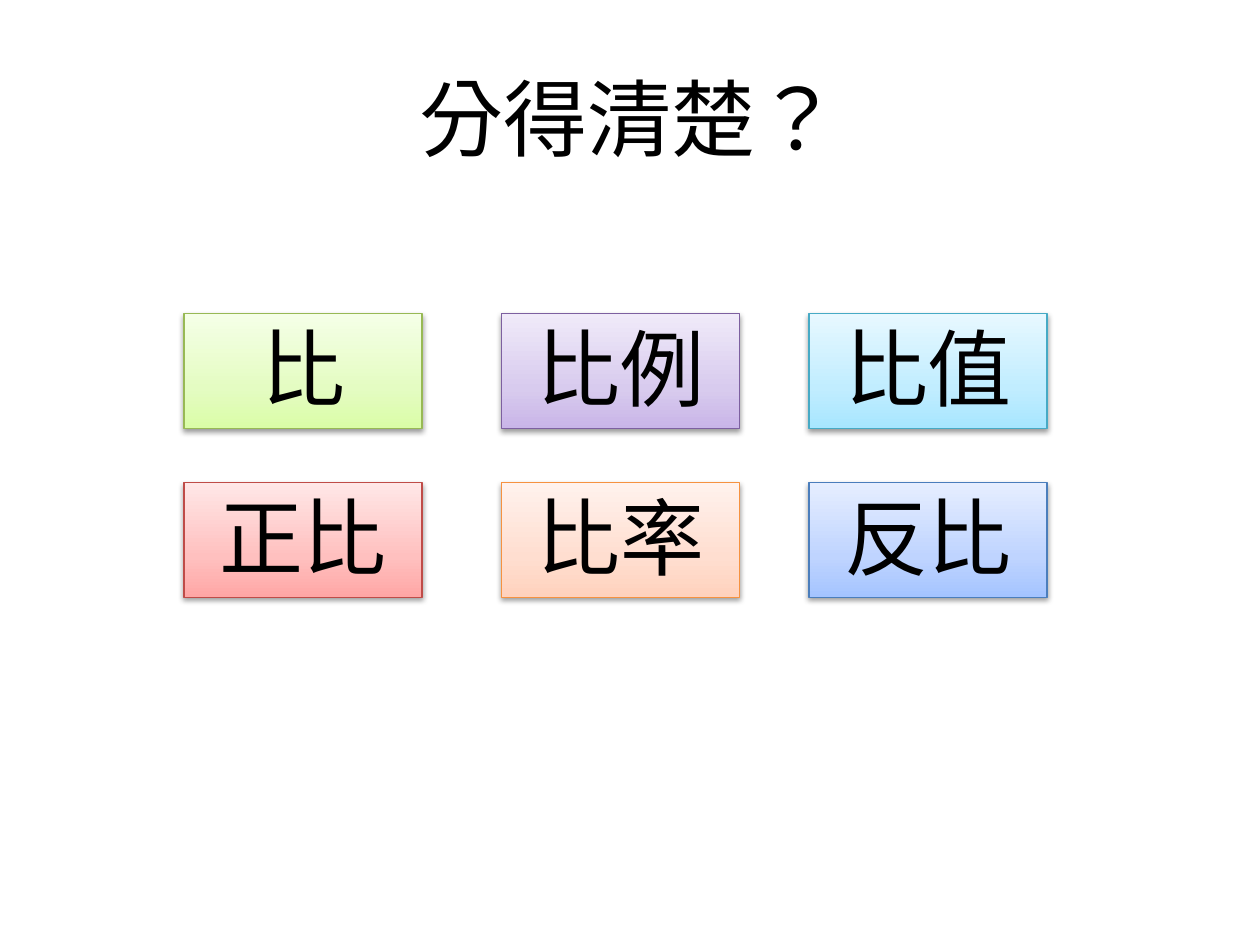
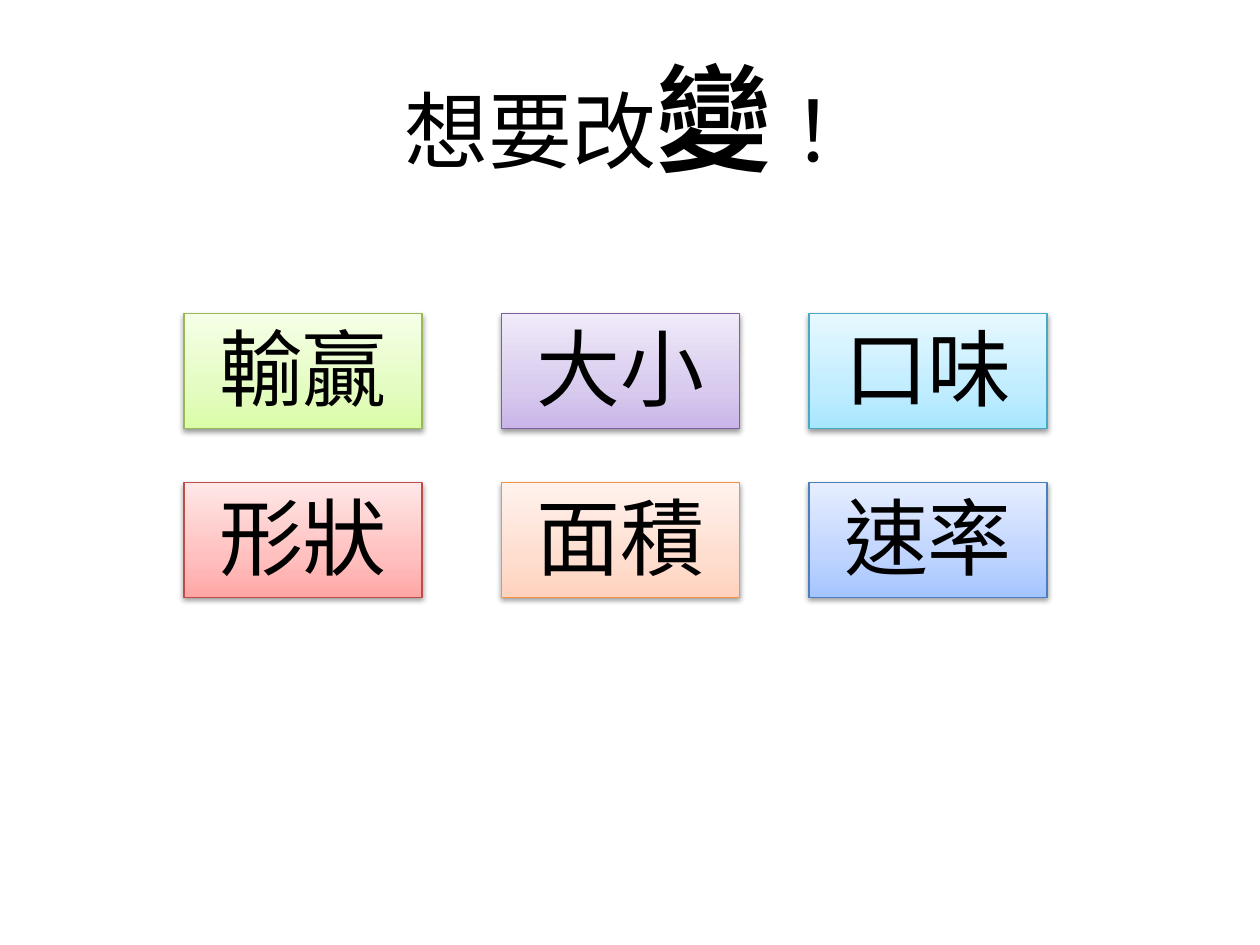
from dataclasses import dataclass

from lxml.etree import SubElement
from pptx import Presentation
from pptx.dml.color import RGBColor
from pptx.enum.shapes import MSO_SHAPE
from pptx.enum.text import MSO_ANCHOR, PP_ALIGN
from pptx.oxml import parse_xml
from pptx.oxml.ns import nsdecls, qn
from pptx.util import Inches, Pt


@dataclass(frozen=True)
class Theme:
    ink: str = "000000"
    title_font: str = "Times New Roman"
    tile_font: str = "Noto Sans CJK SC"
    language: str = "zh-TW"
    text_size: int = 48
    emphasis_size: int = 66
    line_width: float = 0.75
    # Each tile: bottom, middle and top of the gradient, then the border
    tiles: tuple = (
        ("DAFDA7", "E4FCC2", "F5FFE7", "98B955"),
        ("C9B5E8", "D8CBEE", "F0EAF9", "7D60A0"),
        ("A7E6FF", "C1EDFF", "E7F8FF", "46AAC5"),
        ("FFA6A5", "FFC0BF", "FFE7E7", "BF4C48"),
        ("FFD2BD", "FFDED0", "FFF2ED", "F69240"),
        ("A4C4FF", "BFD4FF", "E6EEFF", "4B7EBC"),
    )


THEME = Theme()

# Tile grid, in inches
COLUMNS = (1.46, 3.98, 6.42)
ROWS = (2.49, 3.83)
TILE_WIDTH, TILE_HEIGHT = 1.89, 0.91


def add_span(para, text, font=THEME.tile_font, size=THEME.text_size, bold=False):
    """Add one formatted run to a centred paragraph."""
    para.alignment = PP_ALIGN.CENTER
    span = para.add_run()
    span.text = text
    span.font.name = font
    span.font.size = Pt(size)
    span.font.bold = bold
    span.font.color.rgb = RGBColor.from_string(THEME.ink)
    properties = span.font._element
    properties.set("lang", THEME.language)
    east_asian = SubElement(properties, qn("a:ea"))
    east_asian.set("typeface", THEME.tile_font)


def fill_gradient(box, colours):
    """Fill a box from bottom to top with three colours."""
    stops = "".join(
        f'<a:gs pos="{position}"><a:srgbClr val="{colour}"/></a:gs>'
        for position, colour in zip((0, 35000, 100000), colours)
    )
    box.fill.background()
    blank = box._element.spPr.find(qn("a:noFill"))
    blank.getparent().replace(blank, parse_xml(
        f'<a:gradFill rotWithShape="1" {nsdecls("a")}><a:gsLst>{stops}</a:gsLst>'
        '<a:lin ang="16200000" scaled="0"/></a:gradFill>'
    ))


def add_soft_shadow(box):
    box.shadow.inherit = False
    effects = box._element.spPr.find(qn("a:effectLst"))
    effects.append(parse_xml(
        f'<a:outerShdw blurRad="{Pt(3.1)}" dist="{Pt(1.6)}" dir="5400000" '
        f'rotWithShape="0" {nsdecls("a")}>'
        '<a:srgbClr val="000000"><a:alpha val="38000"/></a:srgbClr></a:outerShdw>'
    ))


def add_tile(page, index, word):
    row, column = divmod(index, len(COLUMNS))
    *gradient, border = THEME.tiles[index]
    box = page.shapes.add_shape(
        MSO_SHAPE.RECTANGLE, Inches(COLUMNS[column]), Inches(ROWS[row]),
        Inches(TILE_WIDTH), Inches(TILE_HEIGHT))
    fill_gradient(box, gradient)
    box.line.color.rgb = RGBColor.from_string(border)
    box.line.width = Pt(THEME.line_width)
    add_soft_shadow(box)
    frame = box.text_frame
    frame.word_wrap = True
    frame.vertical_anchor = MSO_ANCHOR.MIDDLE
    frame.margin_top, frame.margin_bottom = 0, Inches(0.07)
    add_span(frame.paragraphs[0], word)


def add_title(page, spans):
    title = page.shapes.title
    title.left, title.top = Inches(0.5), Inches(0.3)
    title.width, title.height = Inches(9), Inches(1.25)
    title.text_frame.vertical_anchor = MSO_ANCHOR.MIDDLE
    for text, style in spans:
        add_span(title.text_frame.paragraphs[0], text, font=THEME.title_font, **style)


def add_word_page(deck, title_spans, words):
    page = deck.slides.add_slide(deck.slide_layouts.get_by_name("Title Only"))
    add_title(page, title_spans)
    for index, word in enumerate(words):
        add_tile(page, index, word)


def main():
    deck = Presentation()
    deck.slide_width, deck.slide_height = Inches(10), Inches(7.5)

    # Ratio vocabulary
    add_word_page(deck, [("分得清楚？", {})],
                  ("比", "比例", "比值", "正比", "比率", "反比"))

    # Things that change
    emphasis = {"size": THEME.emphasis_size, "bold": True}
    add_word_page(deck, [("想要改", {}), ("變", emphasis), ("！", {})],
                  ("輸贏", "大小", "口味", "形狀", "面積", "速率"))

    deck.save("out.pptx")


if __name__ == "__main__":
    main()
